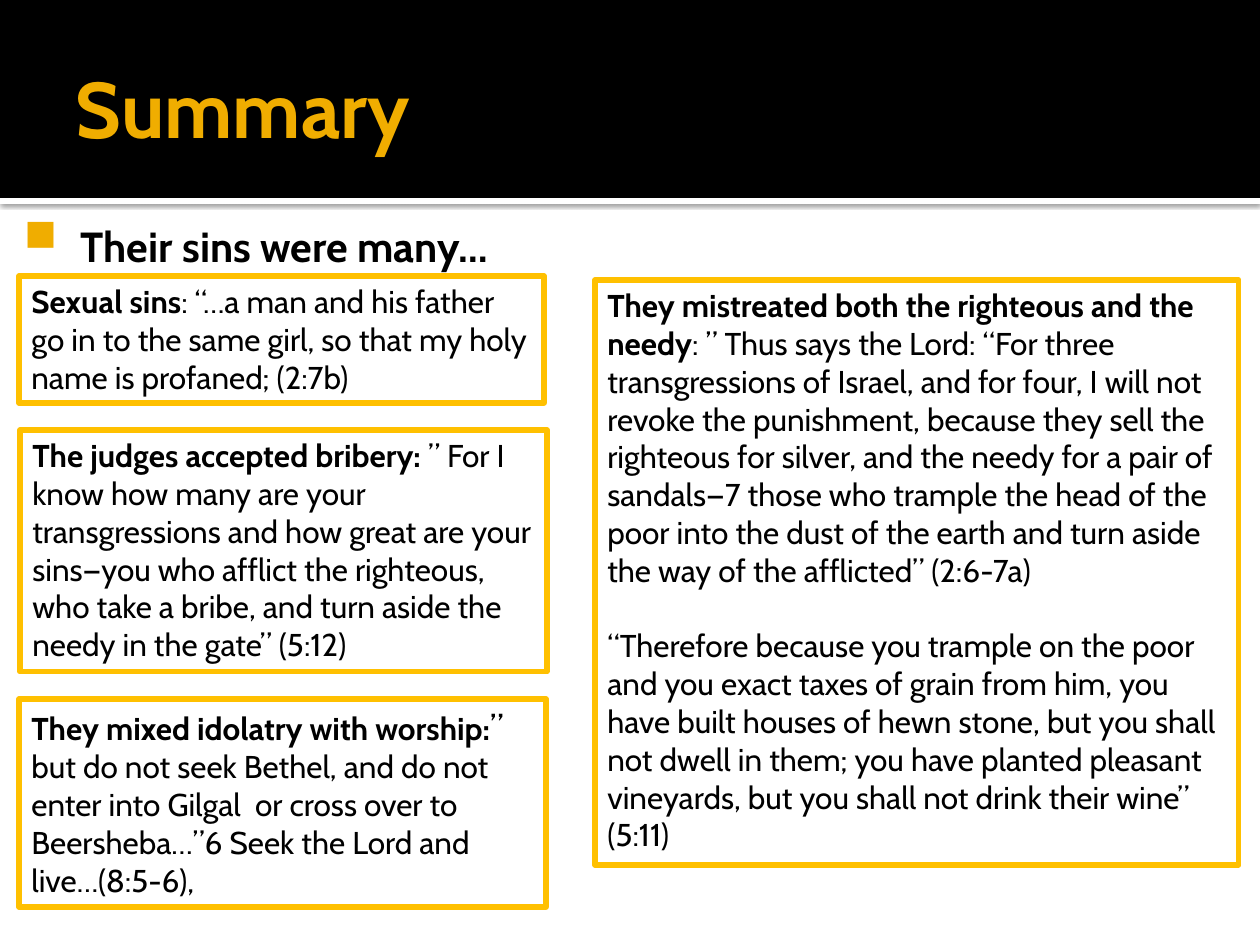
from lxml import etree
from pptx import Presentation, util as u
from pptx.dml.color import RGBColor
from pptx.enum import shapes, text
from pptx.oxml import ns

PX = u.Inches(1) // 126
FONT = "Cabin"
GOLD, AMBER, BLACK, WHITE = "F0AD00", "FFC000", "000000", "FFFFFF"


def color(hue):
    return RGBColor.from_string(hue)


def node(top, tag, **attrs):
    return etree.SubElement(top, ns.qn(tag), attrs)


def rect(slide, place, fill=None, line=None):
    shape = slide.shapes.add_shape(
        shapes.MSO_SHAPE.RECTANGLE, *(n * PX for n in place))
    shape.shadow.inherit = False
    if fill:
        shape.fill.solid()
        shape.fill.fore_color.rgb = color(fill)
    else:
        shape.fill.background()
    if line:
        shape.line.color.rgb = color(line)
        shape.line.width = u.Pt(3)
    else:
        shape.line.fill.background()
    return shape


def write(par, runs):
    """Add runs given as (words, size, bold, hue)."""
    par.alignment = text.PP_ALIGN.LEFT
    for words, size, bold, hue in runs:
        run = par.add_run()
        run.text = words
        run.font.name = FONT
        run.font.size = u.Pt(size)
        run.font.bold = bold
        run.font.color.rgb = color(hue)


def label(slide, place, pads, runs, anchor=text.MSO_ANCHOR.TOP):
    box = slide.shapes.add_textbox(*(n * PX for n in place))
    frame = box.text_frame
    frame.word_wrap = True
    frame.vertical_anchor = anchor
    (frame.margin_left, frame.margin_top,
     frame.margin_right, frame.margin_bottom) = (n * PX for n in pads)
    write(frame.paragraphs[0], runs)
    return frame.paragraphs[0]


def bullet(par, left, hang):
    props = par._p.get_or_add_pPr()
    props.set("marL", str(left * PX))
    props.set("indent", str(-hang * PX))
    node(node(props, "a:buClr"), "a:srgbClr", val=GOLD)
    node(props, "a:buSzPct", val="80000")
    node(props, "a:buChar", char="■")


def card(slide, place, *pars):
    """Draw a framed quote; each paragraph is a list of (words, size, bold)."""
    shape = rect(slide, place, line=AMBER)
    frame = shape.text_frame
    frame.word_wrap = True
    frame.vertical_anchor = text.MSO_ANCHOR.TOP
    frame.auto_size = text.MSO_AUTO_SIZE.SHAPE_TO_FIT_TEXT
    for i, runs in enumerate(pars):
        par = frame.add_paragraph() if i else frame.paragraphs[0]
        if i:
            par.space_before = u.Pt(21.6)
        write(par, [(*run, BLACK) for run in runs])


def header(slide):
    # White rule with a soft shadow below the black band
    rule = rect(slide, (0, 198, 1260, 6), fill=WHITE)
    effects = rule._element.spPr.find(ns.qn("a:effectLst"))
    cast = node(effects, "a:outerShdw", blurRad="31750", dist="10160",
                dir="5400000", algn="tl", rotWithShape="0")
    node(node(cast, "a:srgbClr", val=BLACK), "a:alpha", val="60000")
    rect(slide, (0, 0, 1260, 198), fill=BLACK)
    label(slide, (63, 21, 1134, 173), (13, 6, 6, 6),
          [("Summary", 45, True, GOLD)], text.MSO_ANCHOR.MIDDLE)


def main():
    deck = Presentation()
    deck.slide_width, deck.slide_height = 1260 * PX, 945 * PX
    slide = deck.slides.add_slide(deck.slide_layouts[6])
    header(slide)

    # Lead line
    lead = label(slide, (0, 194, 1239, 730), (8, 13, 13, 6),
                 [(" ", 32, False, BLACK),
                  ("Their sins were many…", 24, True, BLACK)])
    bullet(lead, 60, 44)

    # Quotes
    card(slide, (19, 276, 525, 127), [
        ("Sexual sins", 18, True),
        (": “…a man and his father go in to the same girl, so that my holy "
         "name is profaned; (2:7b)", 18, False)])
    card(slide, (595, 280, 644, 585), [
        ("They mistreated both the righteous and the needy", 18, True),
        (": ” Thus says the Lord: “For three transgressions of Israel, and "
         "for four, I will not revoke the punishment, because they sell the "
         "righteous for silver, and the needy for a pair of sandals—7 those "
         "who trample the head of the poor into the dust of the earth and "
         "turn aside the way of the afflicted” (2:6-7a)", 18, False),
    ], [
        ("“Therefore because you trample on the poor and you exact taxes of "
         "grain from him, you have built houses of hewn stone, but you shall "
         "not dwell in them; you have planted pleasant vineyards, but you "
         "shall not drink their wine” (5:11)", 18, False)])
    card(slide, (19, 699, 527, 208), [
        ("They mixed idolatry with worship:", 18, True),
        ("” ", 20, False),
        ("but do not seek Bethel, and do not enter into Gilgal  or cross over "
         "to Beersheba…”6 Seek the Lord and live…(8:5-6),", 18, False)])
    card(slide, (20, 430, 527, 242), [
        ("The judges accepted bribery: ", 18, True),
        ("” For I know how many are your transgressions and how great are "
         "your sins—you who afflict the righteous, who take a bribe, and turn "
         "aside the needy in the gate” (5:12)", 18, False)])

    deck.save("out.pptx")


if __name__ == "__main__":
    main()
